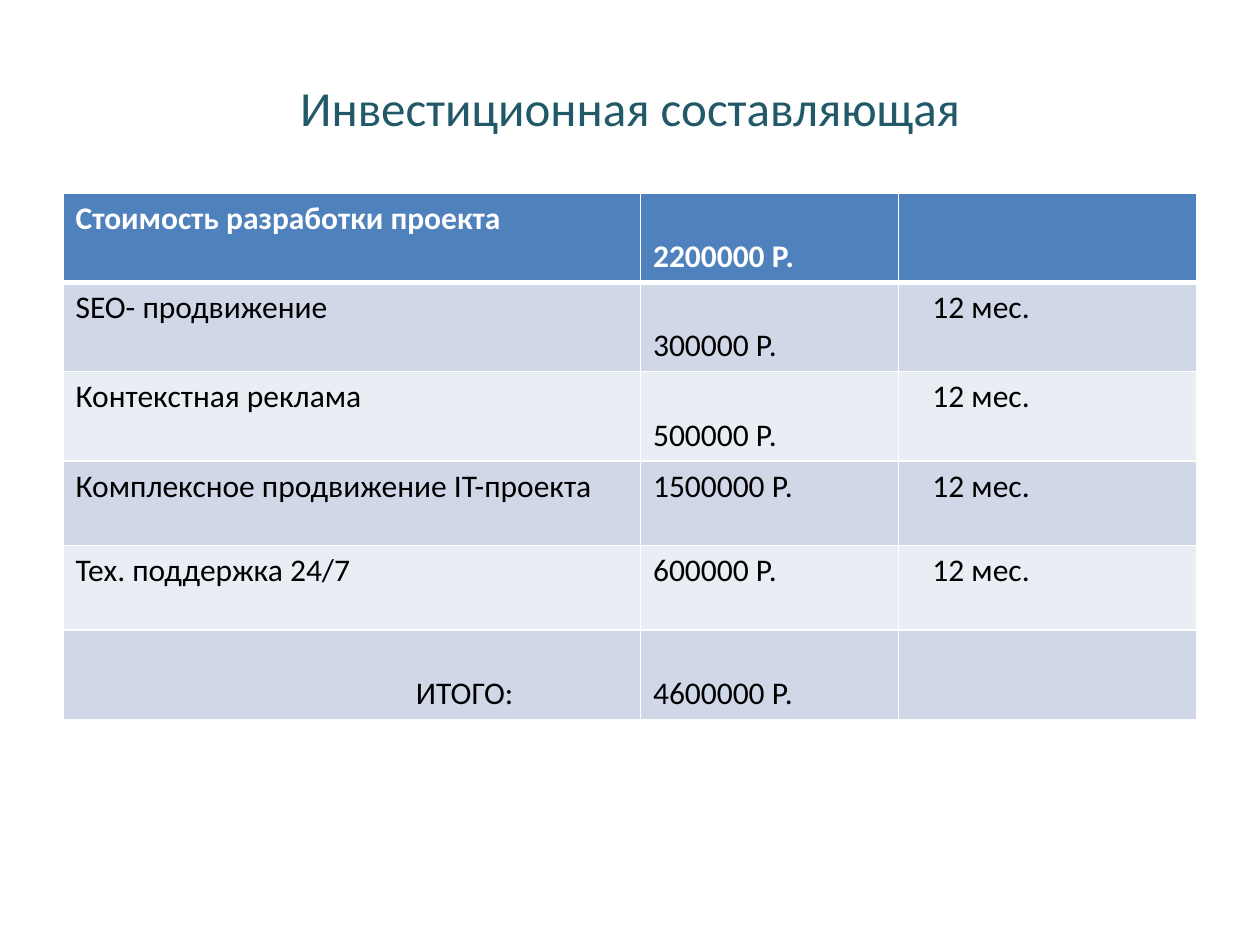
from lxml import etree
from pptx import Presentation
from pptx import util as u
from pptx.dml.color import RGBColor
from pptx.enum import text
from pptx.oxml import ns

FONT = "Calibri"
TOP, BOTTOM = text.MSO_ANCHOR.TOP, text.MSO_ANCHOR.BOTTOM
COLUMNS = (330, 147.5, 170.5)
TERM_INDENT, TOTAL_INDENT = 12.2, 194.5
TERM = ("12 мес.", TOP, TERM_INDENT)
EMPTY = ("", TOP, 0)
ROWS = [
    (51.1, [("Стоимость разработки проекта", TOP, 0), ("2200000 Р.", BOTTOM, 0), EMPTY]),
    (51.1, [("SEO- продвижение", TOP, 0), ("300000 Р.", BOTTOM, 0), TERM]),
    (51.1, [("Контекстная реклама", TOP, 0), ("500000 Р.", BOTTOM, 0), TERM]),
    (48.3, [("Комплексное продвижение IT-проекта", TOP, 0), ("1500000 Р.", TOP, 0), TERM]),
    (48.3, [("Тех. поддержка 24/7", TOP, 0), ("600000 Р.", TOP, 0), TERM]),
    (51.1, [("ИТОГО:", BOTTOM, TOTAL_INDENT), ("4600000 Р.", BOTTOM, 0), EMPTY]),
]


def rgb(value):
    """Return the colour for a hex string."""
    return RGBColor.from_string(value)


def add_run(p, wording, size, color, bold=False):
    """Add one formatted run to a paragraph."""
    r = p.add_run()
    r.text = wording
    r.font.name, r.font.size, r.font.bold = FONT, u.Pt(size), bold
    r.font.color.rgb = rgb(color)


def add_title(s, wording):
    """Add the centred slide title."""
    sp = s.shapes.add_textbox(u.Pt(36), u.Pt(21.6), u.Pt(648), u.Pt(78.5))
    tf = sp.text_frame
    tf.word_wrap = True
    tf.vertical_anchor = text.MSO_ANCHOR.MIDDLE
    p = tf.paragraphs[0]
    p.alignment = text.PP_ALIGN.CENTER
    add_run(p, wording, 28, "215968")


def set_border(cell, side, width, color="FFFFFF"):
    """Draw one border (L, R, T or B) of a cell."""
    tc_pr = cell._tc.get_or_add_tcPr()
    ln = etree.SubElement(tc_pr, ns.qn(f"a:ln{side}"), w=str(u.Pt(width)))
    fill = etree.SubElement(ln, ns.qn("a:solidFill"))
    etree.SubElement(fill, ns.qn("a:srgbClr"), val=color)


def fill_cell(cell, content, row):
    """Write and style one cell according to its row."""
    wording, anchor, indent = content
    header = row == 0
    for side in "LRTB":
        heavy = (header and side == "B") or (row == 1 and side == "T")
        set_border(cell, side, 3 if heavy else 1)
    cell.fill.solid()
    cell.fill.fore_color.rgb = rgb("4F81BD" if header else ("E9EDF4", "D0D8E8")[row % 2])
    cell.vertical_anchor = anchor
    cell.margin_left = u.Pt(7.2 + indent)
    if wording:
        color = "FFFFFF" if header else "000000"
        add_run(cell.text_frame.paragraphs[0], wording, 18, color, header)


def add_cost_table(s):
    """Add the table of project costs."""
    height = sum(h for h, _ in ROWS)
    frame = s.shapes.add_table(len(ROWS), len(COLUMNS), u.Pt(36), u.Pt(110.2),
                               u.Pt(sum(COLUMNS)), u.Pt(height))
    table = frame.table
    for column, width in zip(table.columns, COLUMNS):
        column.width = u.Pt(width)
    for i, (row_height, contents) in enumerate(ROWS):
        table.rows[i].height = u.Pt(row_height)
        for j, content in enumerate(contents):
            fill_cell(table.cell(i, j), content, i)


def main():
    """Build and save the slide."""
    prs = Presentation()
    prs.slide_width, prs.slide_height = u.Pt(720), u.Pt(540)
    s = prs.slides.add_slide(prs.slide_layouts[6])
    add_title(s, "Инвестиционная составляющая")
    add_cost_table(s)
    prs.save("out.pptx")


if __name__ == "__main__":
    main()
